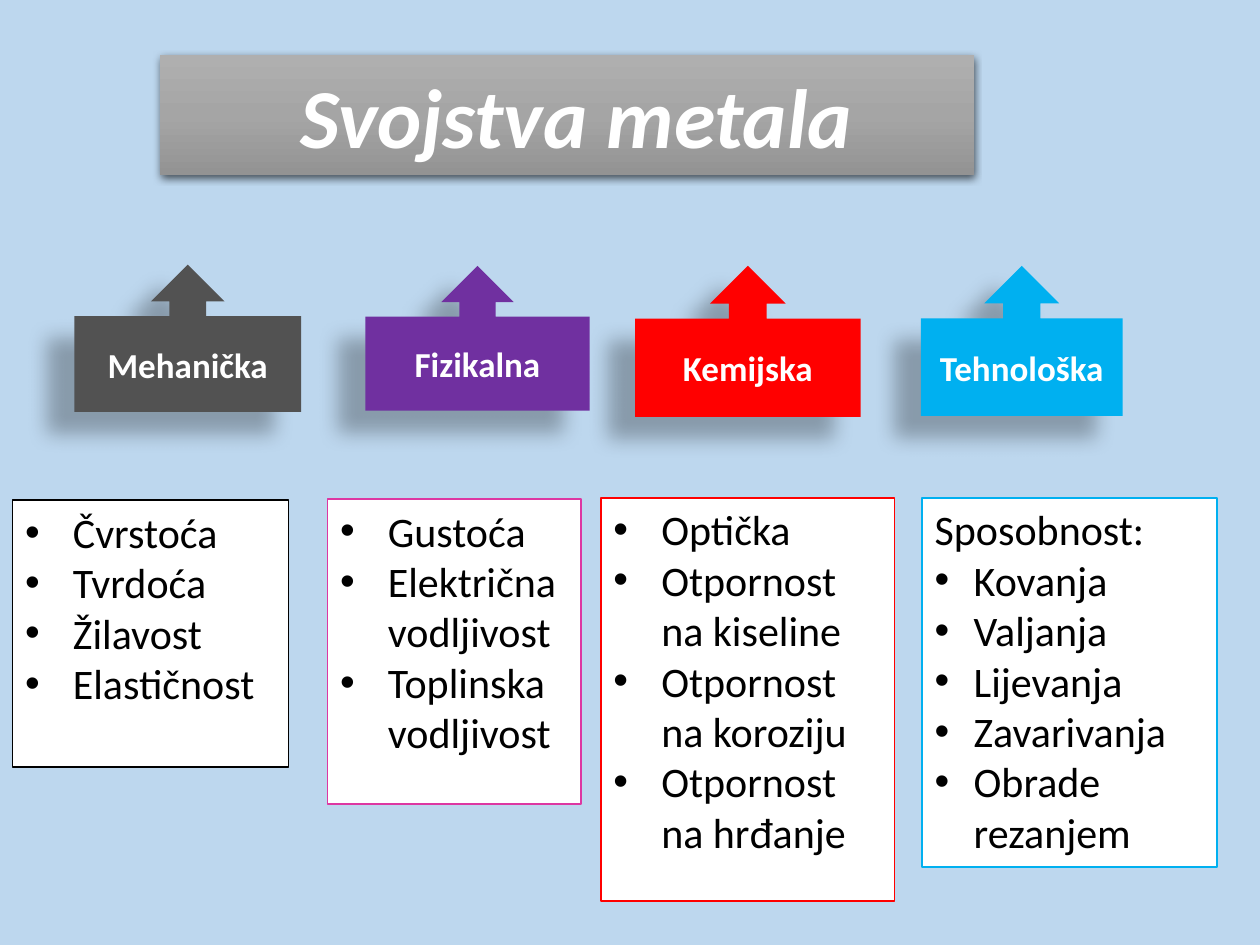
from copy import deepcopy

from lxml.etree import SubElement
from pptx import Presentation
from pptx.dml.color import RGBColor
from pptx.enum.shapes import MSO_SHAPE as SHAPE
from pptx.enum.text import MSO_ANCHOR as ANCHOR, PP_ALIGN as ALIGN
from pptx.oxml.ns import qn
from pptx.util import Inches, Pt

BLACK = RGBColor(0x00, 0x00, 0x00)
WHITE = RGBColor(0xFF, 0xFF, 0xFF)
SKY = RGBColor(0xBD, 0xD7, 0xEE)
GRAPHITE = RGBColor(0x52, 0x52, 0x52)
PURPLE = RGBColor(0x70, 0x30, 0xA0)
PINK = RGBColor(0xDD, 0x37, 0xA2)
RED = RGBColor(0xFF, 0x00, 0x00)
BLUE = RGBColor(0x00, 0xB0, 0xF0)
TITLE_GREYS = [RGBColor(0xAF, 0xAF, 0xAF), RGBColor(0xA5, 0xA5, 0xA5),
               RGBColor(0x93, 0x93, 0x93)]

# label, callout colour, callout box (left, top, width, height)
CALLOUTS = [
    ("Mehanička", GRAPHITE, (0.59, 2.1, 1.8, 1.17)),
    ("Fizikalna", PURPLE, (2.9, 2.11, 1.78, 1.15)),
    ("Kemijska", RED, (5.04, 2.11, 1.79, 1.2)),
    ("Tehnološka", BLUE, (7.31, 2.11, 1.6, 1.19)),
]

# heading, bullets, bullet indent, border colour, box
LISTS = [
    (None, ["Čvrstoća", "Tvrdoća", "Žilavost", "Elastičnost"],
     0.38, BLACK, (0.1, 3.97, 2.19, 2.12)),
    (None, ["Gustoća", "Električna vodljivost", "Toplinska vodljivost"],
     0.38, PINK, (2.6, 3.96, 2.01, 2.42)),
    (None, ["Optička", "Otpornost na kiseline", "Otpornost na koroziju",
            "Otpornost na hrđanje"],
     0.38, RED, (4.77, 3.95, 2.33, 3.2)),
    ("Sposobnost:", ["Kovanja", "Valjanja", "Lijevanja", "Zavarivanja",
                     "Obrade rezanjem"],
     0.31, BLUE, (7.32, 3.95, 2.34, 2.93)),
]


def write(p, text, size=24, color=BLACK, bold=False, italic=False,
          align=ALIGN.LEFT, bullet_indent=None):
    """Fill a paragraph with one formatted run, bulleted if indented."""
    p.alignment = align
    if bullet_indent:
        pPr = p._p.get_or_add_pPr()
        indent = Inches(bullet_indent)
        pPr.set("marL", str(indent))
        pPr.set("indent", str(-indent))
        SubElement(pPr, qn("a:buFont")).set("typeface", "Arial")
        SubElement(pPr, qn("a:buChar")).set("char", "•")
    r = p.add_run()
    r.text = text
    font = r.font
    font.name, font.size = "Calibri", Pt(size)
    font.bold, font.italic = bold, italic
    font.color.rgb = color


def cast_shadow(sp, opacity, blur, distance, angle):
    effects = sp._element.spPr.find(qn("a:effectLst"))
    shadow = SubElement(effects, qn("a:outerShdw"), {
        "blurRad": str(Pt(blur)), "dist": str(Pt(distance)),
        "dir": str(angle * 60000), "algn": "ctr", "rotWithShape": "0"})
    color = SubElement(shadow, qn("a:srgbClr"), val="000000")
    SubElement(color, qn("a:alpha"), val=str(opacity * 1000))


def shade_downwards(sp, colors):
    """Apply a vertical gradient with evenly spaced colours."""
    fill = sp.fill
    fill.gradient()
    fill.gradient_angle = 270
    stops = sp._element.spPr.find(".//" + qn("a:gsLst"))
    for _ in colors[2:]:
        stops.insert(1, deepcopy(stops[0]))
    for i, (stop, color) in enumerate(zip(fill.gradient_stops, colors)):
        stop.position = i / (len(colors) - 1)
        stop.color.rgb = color


class SlideBuilder:
    def __init__(self, s):
        self.s = s
        s.background.fill.solid()
        s.background.fill.fore_color.rgb = SKY

    def shape(self, kind, box, fill=WHITE, line=None, anchor=ANCHOR.MIDDLE):
        sp = self.s.shapes.add_shape(kind, *map(Inches, box))
        sp.shadow.inherit = False
        sp.fill.solid()
        sp.fill.fore_color.rgb = fill
        if line is None:
            sp.line.fill.background()
        else:
            sp.line.color.rgb = line
            sp.line.width = Pt(1)
        sp.text_frame.word_wrap = True
        sp.text_frame.vertical_anchor = anchor
        return sp

    def title(self, text, box):
        sp = self.shape(SHAPE.RECTANGLE, box)
        shade_downwards(sp, TITLE_GREYS)
        cast_shadow(sp, 63, 4.5, 1.5, 90)
        write(sp.text_frame.paragraphs[0], text, size=48, color=WHITE,
              bold=True, italic=True, align=ALIGN.CENTER)

    def callout(self, label, color, box):
        sp = self.shape(SHAPE.UP_ARROW_CALLOUT, box, fill=color)
        cast_shadow(sp, 28, 11.8, 19.7, 141)
        write(sp.text_frame.paragraphs[0], label, size=20, color=WHITE,
              bold=True, align=ALIGN.CENTER)

    def bullet_list(self, heading, items, indent, border, box):
        sp = self.shape(SHAPE.RECTANGLE, box, line=border, anchor=ANCHOR.TOP)
        tf = sp.text_frame
        lines = [(item, indent) for item in items]
        if heading:
            lines.insert(0, (heading, None))
        for i, (text, bullet_indent) in enumerate(lines):
            p = tf.add_paragraph() if i else tf.paragraphs[0]
            write(p, text, bullet_indent=bullet_indent)


def main():
    prs = Presentation()
    prs.slide_width, prs.slide_height = Inches(10), Inches(7.5)
    builder = SlideBuilder(prs.slides.add_slide(prs.slide_layouts[6]))
    builder.title(" Svojstva metala", (1.27, 0.44, 6.46, 0.95))
    for callout in CALLOUTS:
        builder.callout(*callout)
    for properties in LISTS:
        builder.bullet_list(*properties)
    prs.save("out.pptx")


if __name__ == "__main__":
    main()
